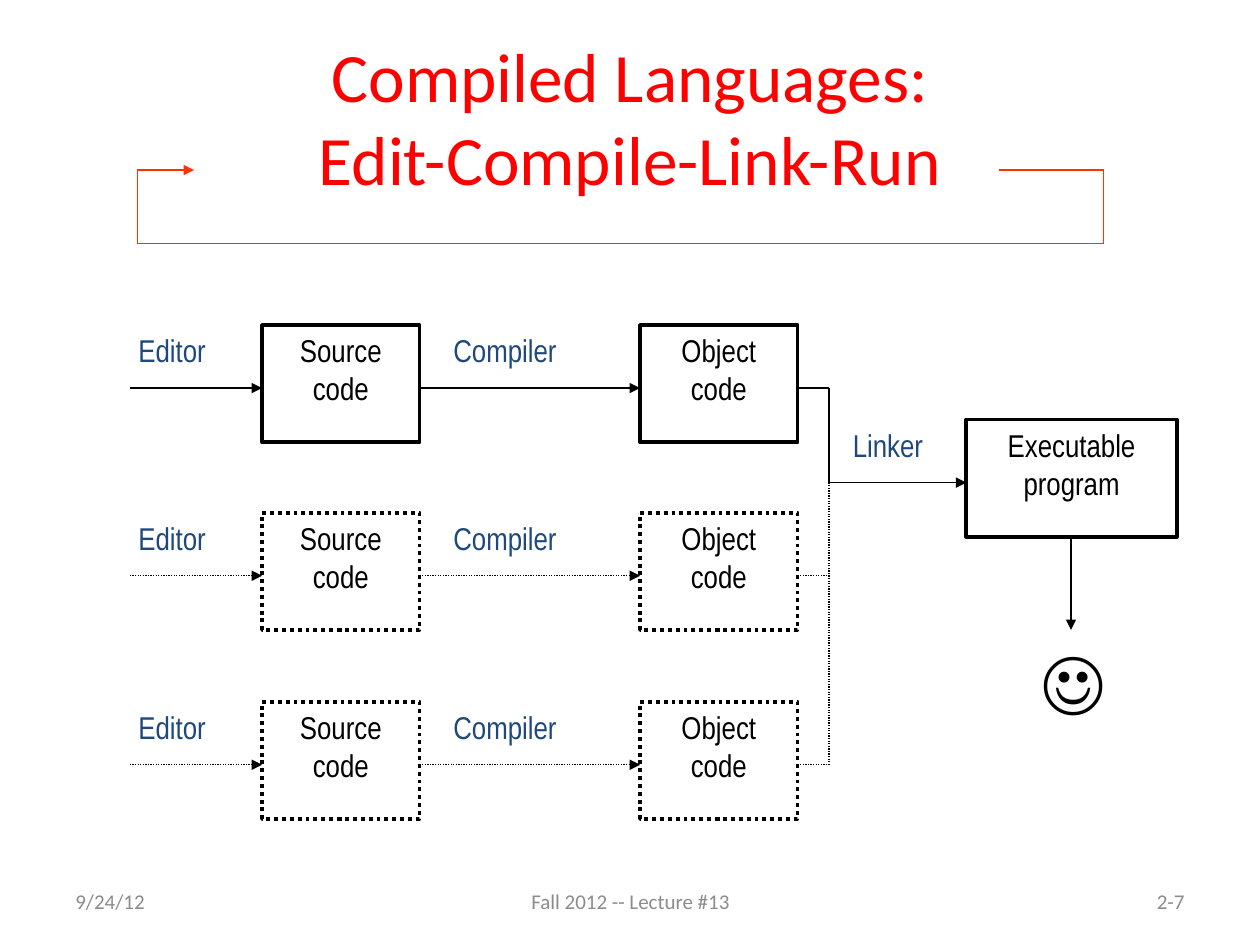
from lxml.etree import SubElement
from pptx import Presentation
from pptx.dml.color import RGBColor
from pptx.enum.dml import MSO_LINE_DASH_STYLE as Dash
from pptx.enum.shapes import MSO_CONNECTOR as Connector, MSO_SHAPE as Shape
from pptx.enum.text import MSO_ANCHOR as Anchor, PP_ALIGN as Align
from pptx.oxml.ns import qn
from pptx.util import Inches, Pt

BLACK, RED, ORANGE, BLUE, GRAY = "000000", "FF0000", "FF3300", "1F497D", "8C8C8C"
rgb = RGBColor.from_string

prs = Presentation()
prs.slide_width, prs.slide_height = Inches(10), Inches(7.5)
slide = prs.slides.add_slide(prs.slide_layouts[6])
shapes = slide.shapes


def add_text(place, text, size=18, color=BLUE, font="Arial Narrow",
             align=Align.LEFT, anchor=Anchor.TOP, border=None):
    """Text in a plain box, or in a rectangle when a border dash is given."""
    place = [Inches(length) for length in place]
    if border is None:
        holder = shapes.add_textbox(*place)
    else:
        holder = shapes.add_shape(Shape.RECTANGLE, *place)
        holder.shadow.inherit = False
        holder.fill.background()
        holder.line.color.rgb = rgb(BLACK)
        holder.line.width = Pt(2.25)
        holder.line.dash_style = border
    frame = holder.text_frame
    frame.word_wrap = True
    frame.vertical_anchor = anchor
    frame.text = text
    for paragraph in frame.paragraphs:
        paragraph.alignment = align
        paragraph.font.name = font
        paragraph.font.size = Pt(size)
        paragraph.font.color.rgb = rgb(color)


def add_line(start, end, color=BLACK, dash=Dash.SOLID, arrow=False):
    """Thin straight line, with an arrowhead at its end if asked."""
    ends = [Inches(length) for length in (*start, *end)]
    connector = shapes.add_connector(Connector.STRAIGHT, *ends)
    connector.line.color.rgb = rgb(color)
    connector.line.width = Pt(0.75)
    connector.line.dash_style = dash
    if arrow:
        SubElement(connector.line._get_or_add_ln(), qn("a:tailEnd"), type="triangle")
    SubElement(connector._element.spPr, qn("a:effectLst"))


# Title
add_text((0.5, 0.3, 9, 1.25), "Compiled Languages:\vEdit-Compile-Link-Run",
         39.6, RED, "Calibri", Align.CENTER, Anchor.MIDDLE)

# Loop from the end of the title back to its start
loop = [(7.93, 1.35), (8.76, 1.35), (8.76, 1.93), (1.09, 1.93), (1.09, 1.35), (1.54, 1.35)]
for start, end in zip(loop, loop[1:]):
    add_line(start, end, ORANGE, arrow=end == loop[-1])

# Edit and compile rows: the first is solid, the others dotted
BOX_HEIGHT, ARROW_DROP, BUS_X, LINK_Y = 0.93, 0.5, 6.58, 3.83
rows = [(2.58, Dash.SOLID), (4.07, Dash.ROUND_DOT), (5.57, Dash.ROUND_DOT)]
stages = [("Editor", 1, 1.08, 1.03, "Source\ncode", 2.08),
          ("Compiler", 3.5, 1.33, 3.33, "Object\ncode", 5.08)]
for top, dash in rows:
    arrow_y = top + ARROW_DROP
    for tool, tool_x, tool_width, arrow_x, product, product_x in stages:
        add_text((tool_x, top, tool_width, 0.5), tool)
        add_line((arrow_x, arrow_y), (product_x, arrow_y), dash=dash, arrow=True)
        add_text((product_x, top, 1.25, BOX_HEIGHT), product, color=BLACK,
                 align=Align.CENTER, border=dash)
    add_line((6.33, arrow_y), (BUS_X, arrow_y), dash=dash)

# Object code joined at the linker
add_line((BUS_X, rows[0][0] + ARROW_DROP), (BUS_X, LINK_Y))
add_line((BUS_X, LINK_Y), (BUS_X, rows[-1][0] + ARROW_DROP), dash=Dash.ROUND_DOT)
add_text((6.67, 3.33, 1.17, 0.5), "Linker")
add_line((BUS_X, LINK_Y), (7.67, LINK_Y), arrow=True)

# Executable program and its happy user
add_text((7.67, 3.33, 1.67, BOX_HEIGHT), "Executable\nprogram", color=BLACK,
         align=Align.CENTER, border=Dash.SOLID)
add_line((8.5, 3.33 + BOX_HEIGHT), (8.5, 5), arrow=True)
add_text((8.17, 5, 0.67, 0.77), "☺", 40, BLACK, "Calibri", Align.CENTER)

# Footer
for left, width, text, align in [(0.5, 2.33, "9/24/12", Align.LEFT),
                                 (3.42, 3.17, "Fall 2012 -- Lecture #13", Align.CENTER),
                                 (7.17, 2.33, "2-7", Align.RIGHT)]:
    add_text((left, 6.95, width, 0.4), text, 12, GRAY, "Calibri", align, Anchor.MIDDLE)

prs.save("out.pptx")
